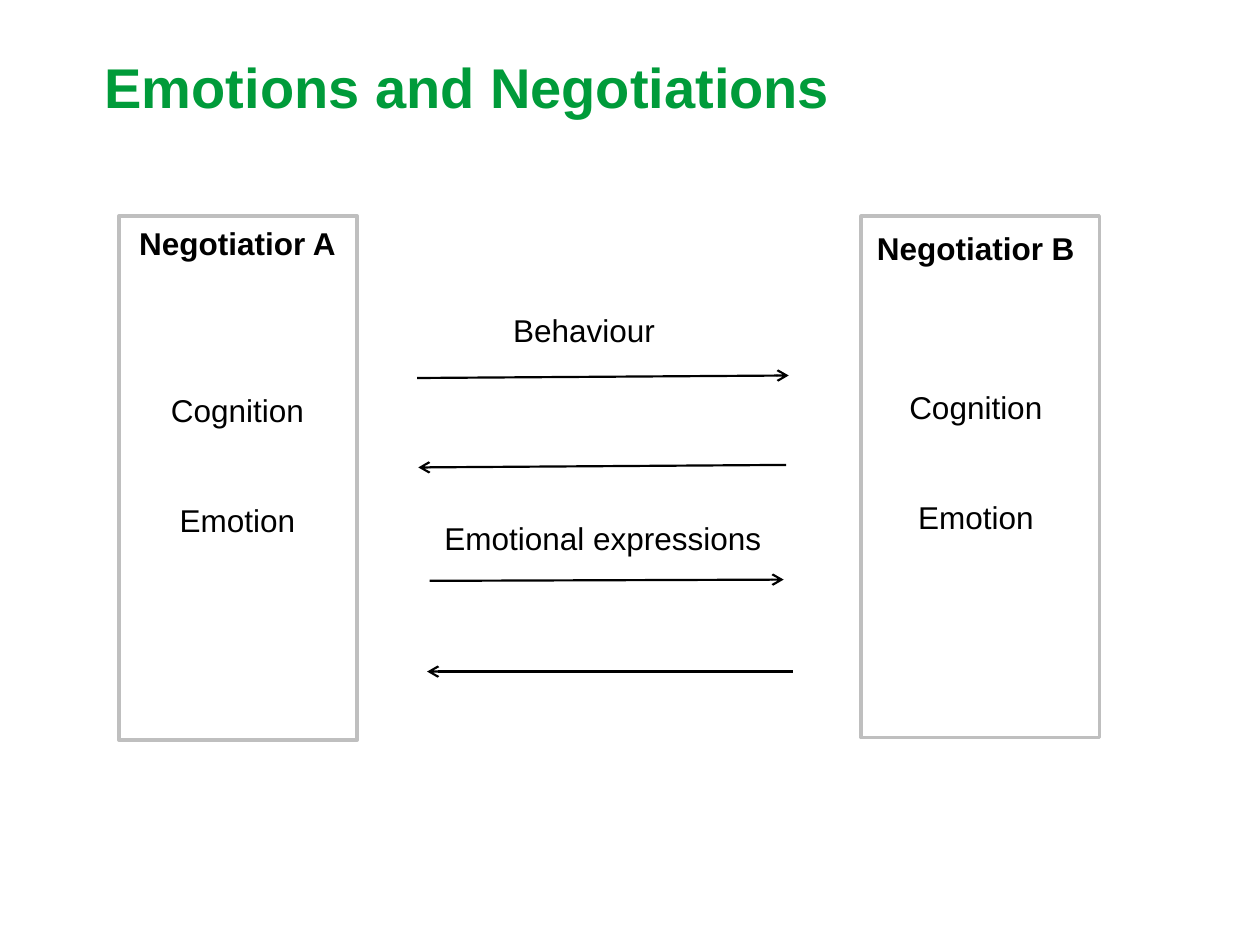
from lxml import etree
from pptx import Presentation
from pptx.dml.color import RGBColor
from pptx.enum.shapes import MSO_CONNECTOR as Connector, MSO_SHAPE as Shape
from pptx.enum.text import MSO_ANCHOR as Anchor, PP_ALIGN as Align
from pptx.oxml.ns import qn
from pptx.util import Inches, Pt

COLORS = {"title": "009B3A", "text": "000000", "frame": "BFBFBF"}

presentation = Presentation()
presentation.slide_width, presentation.slide_height = Inches(10), Inches(7.5)
slide = presentation.slides.add_slide(presentation.slide_layouts[5])

# Grid of 100 columns by 75 rows
CELL = presentation.slide_width / 100


def grid(*cells):
    return [round(cell * CELL) for cell in cells]


def write(shape, *lines, size=18, color="text", bold=False, align=Align.CENTER,
          side=0.05, edge=0.05, gap=0):
    frame = shape.text_frame
    frame.word_wrap = True
    frame.vertical_anchor = Anchor.TOP
    frame.margin_left = frame.margin_right = Inches(side)
    frame.margin_top = frame.margin_bottom = Inches(edge)
    for index, line in enumerate(lines):
        paragraph = frame.add_paragraph() if index else frame.paragraphs[0]
        paragraph.text = line
        paragraph.alignment = align
        paragraph.space_before = Pt(gap if index else 0)
        font = paragraph.font
        font.name, font.size, font.bold = "Arial", Pt(size), bold
        font.color.rgb = RGBColor.from_string(COLORS[color])


# Title
title = slide.shapes.title
title.left, title.top, title.width, title.height = grid(8.3, 4.2, 87.4, 11.8)
write(title, "Emotions and Negotiations", size=32, color="title", bold=True,
      align=Align.LEFT, side=0, edge=0)

# Negotiators: frame, heading and inner states
for name, frame_left, frame_height, text_left, heading_top, states_top in (
        ("Negotiatior A", 9.45, 41.6, 10, 17.3, 30.5),
        ("Negotiatior B", 68.35, 41.4, 68.6, 17.7, 30.3)):
    box = slide.shapes.add_shape(
        Shape.RECTANGLE, *grid(frame_left, 17.15, 18.9, frame_height))
    box.shadow.inherit = False
    box.fill.background()
    box.line.color.rgb = RGBColor.from_string(COLORS["frame"])
    box.line.width = Pt(2)
    heading = slide.shapes.add_textbox(*grid(text_left, heading_top, 17.7, 4))
    write(heading, name, bold=True)
    states = slide.shapes.add_textbox(*grid(text_left, states_top, 17.7, 13.1))
    write(states, "Cognition", "Emotion", gap=41.4)

# Labels of the exchanges
for label, left, top, width in (("Behaviour", 37.5, 24.2, 17.7),
                                ("Emotional expressions", 34.2, 40.7, 27.3)):
    write(slide.shapes.add_textbox(*grid(left, top, width, 4)), label)

# Arrows between the negotiators
for ends in ((33.1, 30, 62.6, 29.8), (62.4, 36.9, 33.2, 37.1),
             (34.1, 46.1, 62.2, 46), (62.9, 53.3, 33.9, 53.3)):
    arrow = slide.shapes.add_connector(Connector.STRAIGHT, *grid(*ends))
    arrow.line.color.rgb = RGBColor.from_string(COLORS["text"])
    arrow.line.width = Pt(1.25)
    etree.SubElement(arrow.line._get_or_add_ln(), qn("a:tailEnd"), type="arrow")
    etree.SubElement(arrow._element.spPr, qn("a:effectLst"))

presentation.save("out.pptx")
